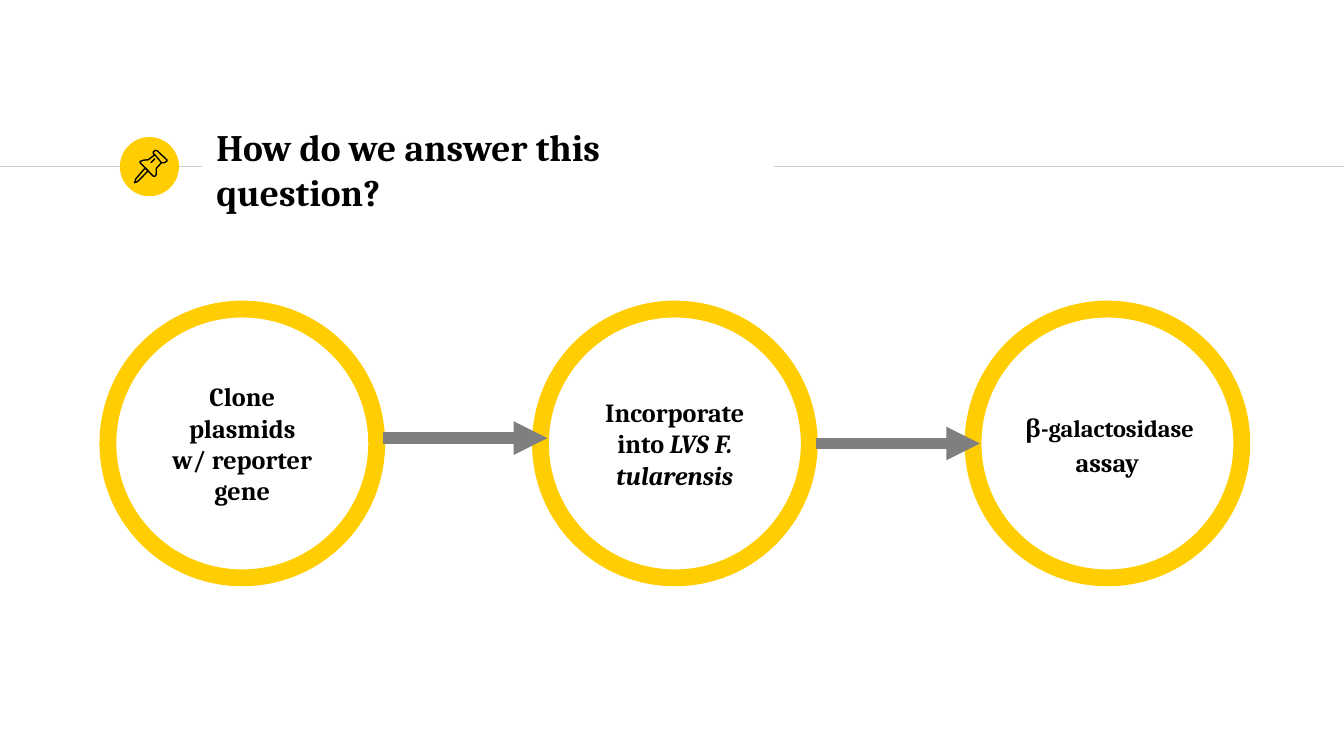
from lxml.etree import SubElement
from pptx import Presentation
from pptx.dml.color import RGBColor
from pptx.enum.shapes import MSO_CONNECTOR, MSO_SHAPE
from pptx.enum.text import MSO_ANCHOR, PP_ALIGN
from pptx.oxml.ns import qn
from pptx.util import Inches, Pt

COLORS = {"yellow": "FFCD00", "rule": "CCCCCC", "arrow": "7F7F7F", "ink": "000000"}
FONT = "Cambria"
COLS, ROWS = 100, 56.25  # square grid cells, a tenth of an inch each

# Pushpin outlines in hundredths of the pin's box: points, closed
PIN = [
    ([(33, 54), (4, 88), (0, 100), (10, 96), (42, 63)], True),  # needle
    ([(63, 13), (83, 38), (92, 38), (100, 33), (100, 29), (69, 0),
      (63, 0), (58, 4), (58, 10)], True),  # head
    ([(63, 13), (42, 29), (29, 30), (17, 34), (17, 38), (58, 80),
      (63, 80), (67, 75), (67, 56), (83, 38)], False),  # collar
    ([(50, 38), (63, 25)], False),  # highlight
]

# Each step is a list of paragraphs, each a list of (text, size, italic) runs
STEPS = [
    {"paras": [[("Clone plasmids", 14, False)], [("w/ reporter gene", 14, False)]]},
    {"paras": [[("Incorporate into", 14, False), (" LVS F. tularensis", 14, True)]]},
    {"paras": [[(" ", 9, False), ("β-galactosidase", 13, False),
                (" ", 9, False), ("assay", 14, False)]],
     "inset": 0, "spacing": 1.15},
]


def cells(n):
    return Inches(n / 10)


def rgb(name):
    return RGBColor.from_string(COLORS[name])


def set_line(shape, color, width):
    shape.line.color.rgb = rgb(color)
    shape.line.width = Pt(width)


def add_line(s, x1, x2, y, color, width, arrow=False):
    c = s.shapes.add_connector(MSO_CONNECTOR.STRAIGHT,
                               cells(x1), cells(y), cells(x2), cells(y))
    set_line(c, color, width)
    if arrow:
        SubElement(c.line._get_or_add_ln(), qn("a:tailEnd"), type="triangle")
    SubElement(c._element.spPr, qn("a:effectLst"))


def add_circle(s, x, y, size):
    sp = s.shapes.add_shape(MSO_SHAPE.OVAL, *map(cells, (x, y, size, size)))
    sp.shadow.inherit = False
    return sp


def write(sp, paras, align, inset=1, spacing=None):
    tf = sp.text_frame
    frame = {"word_wrap": True, "vertical_anchor": MSO_ANCHOR.MIDDLE}
    for side in ("left", "top", "right", "bottom"):
        frame[f"margin_{side}"] = cells(inset)
    for name, value in frame.items():
        setattr(tf, name, value)
    for i, runs in enumerate(paras):
        p = tf.add_paragraph() if i else tf.paragraphs[0]
        p.alignment, p.line_spacing = align, spacing
        for text, size, italic in runs:
            r = p.add_run()
            r.text = text
            style = {"name": FONT, "size": Pt(size), "bold": True, "italic": italic}
            for name, value in style.items():
                setattr(r.font, name, value)
            r.font.color.rgb = rgb("ink")


def add_pin(s, x, y, size):
    for points, closed in PIN:
        fb = s.shapes.build_freeform(*points[0], scale=cells(size) / 100)
        fb.add_line_segments(points[1:], close=closed)
        sp = fb.convert_to_shape(cells(x), cells(y))
        sp.shadow.inherit = False
        sp.fill.background()
        set_line(sp, "ink", 0.75)


def add_header(s, x, y, w, h):
    # Rules on both sides of the title
    middle = y + h / 2
    title_x, title_w = x + 6.2, w - 6.2
    for x1, x2 in ((0, title_x - 0.1), (x + w + 0.1, COLS)):
        add_line(s, x1, x2, middle, "rule", 0.75)

    # Badge with pushpin
    badge = add_circle(s, x, y, h)
    badge.fill.solid()
    badge.fill.fore_color.rgb = rgb("yellow")
    badge.line.fill.background()
    add_pin(s, x + 1.1, y + 1, 2.4)

    # Title
    tb = s.shapes.add_textbox(*map(cells, (title_x, y, title_w, 4.8)))
    write(tb, [[("How do we answer this question?", 20, False)]], PP_ALIGN.LEFT)


def add_process(s, x, y, w, size):
    step = (w - size) / (len(STEPS) - 1)
    for i, content in enumerate(STEPS):
        ring = add_circle(s, x + i * step, y, size)
        ring.fill.background()
        set_line(ring, "yellow", 9)
        write(ring, align=PP_ALIGN.CENTER, **content)

    # Arrows, drawn over the rings
    for i, drop in enumerate((9.6, 10)):
        start = x + i * step + size + 0.5
        add_line(s, start, start + 12.2, y + drop, "arrow", 6, arrow=True)


def main():
    prs = Presentation()
    prs.slide_width, prs.slide_height = cells(COLS), cells(ROWS)
    s = prs.slides.add_slide(prs.slide_layouts[6])
    add_header(s, 8.92, 10.2, 48.6, 4.4)
    add_process(s, 8.03, 23, 84.37, 20)
    prs.save("out.pptx")


if __name__ == "__main__":
    main()
